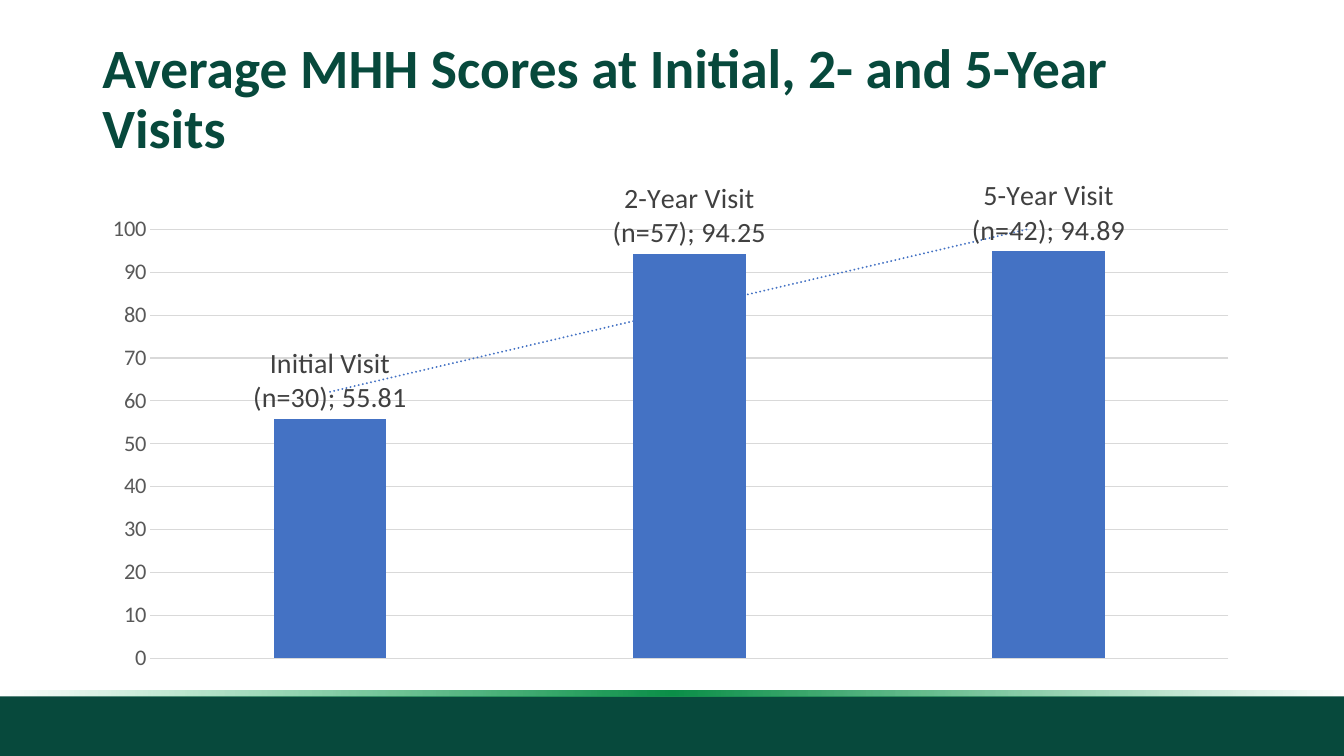
from lxml import etree
from pptx import Presentation
from pptx.chart.data import CategoryChartData
from pptx.dml.color import RGBColor
from pptx.enum.chart import XL_CHART_TYPE, XL_LABEL_POSITION, XL_TICK_MARK
from pptx.enum.shapes import MSO_SHAPE
from pptx.enum.text import MSO_ANCHOR
from pptx.oxml import parse_xml
from pptx.oxml.ns import nsdecls, qn
from pptx.util import Cm, Pt

RECTANGLE = MSO_SHAPE.RECTANGLE
MIDDLE = MSO_ANCHOR.MIDDLE
COLUMNS = XL_CHART_TYPE.COLUMN_CLUSTERED
ABOVE_BAR = XL_LABEL_POSITION.OUTSIDE_END
NO_TICKS = XL_TICK_MARK.NONE

DARK_GREEN = RGBColor(0x07, 0x49, 0x3C)
BLUE = RGBColor(0x44, 0x72, 0xC4)
LABEL_GREY = RGBColor(0x40, 0x40, 0x40)
AXIS_GREY = RGBColor(0x59, 0x59, 0x59)
GRID_GREY = RGBColor(0xD9, 0xD9, 0xD9)
GLOW_STOPS = [
    (0, RGBColor(0x0D, 0x9D, 0x4F), 0),
    (50, RGBColor(0x0C, 0x90, 0x49), 100),
    (100, RGBColor(0x0F, 0xAB, 0x56), 0),
]

FONT = "Calibri"
SLIDE_WIDTH = Cm(33.87)
MARGIN = Cm(2.33)
CONTENT_WIDTH = Cm(29.21)
SCORES = {
    "Initial Visit (n=30)": 55.81,
    "2-Year Visit (n=57)": 94.25,
    "5-Year Visit (n=42)": 94.89,
}


def style_font(font, size, color, bold=False):
    font.name = FONT
    font.size = Pt(size)
    font.bold = bold
    font.color.rgb = color


def add_band(slide, top, height):
    band = slide.shapes.add_shape(RECTANGLE, 0, top, SLIDE_WIDTH, height)
    band.shadow.inherit = False
    band.fill.solid()
    band.fill.fore_color.rgb = DARK_GREEN
    band.line.fill.background()
    return band


def fade_band(band, stops):
    stop_xml = "".join(
        f'<a:gs pos="{position * 1000}"><a:srgbClr val="{color}">'
        f'<a:alpha val="{opacity * 1000}"/></a:srgbClr></a:gs>'
        for position, color, opacity in stops
    )
    gradient = parse_xml(
        f'<a:gradFill {nsdecls("a")} rotWithShape="1"><a:gsLst>{stop_xml}</a:gsLst>'
        '<a:lin ang="10800000" scaled="0"/></a:gradFill>'
    )
    properties = band.fill._xPr
    properties.replace(properties.find(qn("a:solidFill")), gradient)


def add_title(slide, text):
    title = slide.shapes.add_textbox(MARGIN, Cm(1.02), CONTENT_WIDTH, Cm(3.02))
    frame = title.text_frame
    frame.word_wrap = True
    frame.vertical_anchor = MIDDLE
    paragraph = frame.paragraphs[0]
    paragraph.line_spacing = 0.9
    run = paragraph.add_run()
    run.text = text
    style_font(run.font, 39.6, DARK_GREEN, bold=True)


def add_trendline(series):
    trendline = parse_xml(
        f'<c:trendline {nsdecls("c", "a")}><c:spPr><a:ln w="{Pt(1.5)}" cap="rnd">'
        f'<a:solidFill><a:srgbClr val="{BLUE}"/></a:solidFill>'
        '<a:prstDash val="sysDot"/></a:ln></c:spPr>'
        '<c:trendlineType val="linear"/><c:dispRSqr val="0"/><c:dispEq val="0"/>'
        "</c:trendline>"
    )
    series._element.find(qn("c:dLbls")).addnext(trendline)


def label_bars(series):
    labels = series.data_labels
    labels.show_value = True
    labels.show_category_name = True
    labels.position = ABOVE_BAR
    style_font(labels.font, 20, LABEL_GREY)
    separator = etree.Element(qn("c:separator"))
    separator.text = "; "
    labels._element.find(qn("c:showBubbleSize")).addnext(separator)


def place_plot(chart, **fractions):
    sizes = "".join(f'<c:{key} val="{value}"/>' for key, value in fractions.items())
    layout = parse_xml(
        f'<c:layout {nsdecls("c")}><c:manualLayout><c:layoutTarget val="inner"/>'
        f'<c:xMode val="edge"/><c:yMode val="edge"/>{sizes}'
        "</c:manualLayout></c:layout>"
    )
    plot_area = chart._chartSpace.chart.plotArea
    for automatic in plot_area.findall(qn("c:layout")):
        plot_area.remove(automatic)
    plot_area.insert(0, layout)


def style_score_axis(axis):
    axis.minimum_scale = 0
    axis.maximum_scale = 100
    axis.major_unit = 10
    axis.major_tick_mark = NO_TICKS
    axis.minor_tick_mark = NO_TICKS
    axis.format.line.fill.background()
    style_font(axis.tick_labels.font, 16, AXIS_GREY)
    gridline = axis.major_gridlines.format.line
    gridline.color.rgb = GRID_GREY
    gridline.width = Pt(0.75)


def add_score_chart(slide):
    data = CategoryChartData()
    data.categories = list(SCORES)
    data.add_series("Series 1", list(SCORES.values()))
    chart = slide.shapes.add_chart(
        COLUMNS, MARGIN, Cm(4.5), CONTENT_WIDTH, Cm(12.65), data
    ).chart
    chart.has_title = False
    chart.has_legend = False
    chart.font.name = FONT
    chart.font.size = Pt(10)
    chart.category_axis.visible = False
    style_score_axis(chart.value_axis)

    bars = chart.plots[0]
    bars.gap_width = 219
    bars.overlap = -27
    bars.vary_by_categories = False
    series = bars.series[0]
    series.format.fill.solid()
    series.format.fill.fore_color.rgb = BLUE
    label_bars(series)
    add_trendline(series)
    place_plot(chart, x=0.05, y=0.095, w=0.93, h=0.86)


def main():
    presentation = Presentation()
    presentation.slide_width = SLIDE_WIDTH
    presentation.slide_height = Cm(19.05)
    slide = presentation.slides.add_slide(presentation.slide_layouts[6])
    add_band(slide, Cm(17.55), Cm(1.5))
    glow = add_band(slide, Cm(17.4), Cm(0.14))
    fade_band(glow, GLOW_STOPS)
    add_title(slide, "Average MHH Scores at Initial, 2- and 5-Year Visits")
    add_score_chart(slide)
    presentation.save("out.pptx")


if __name__ == "__main__":
    main()
